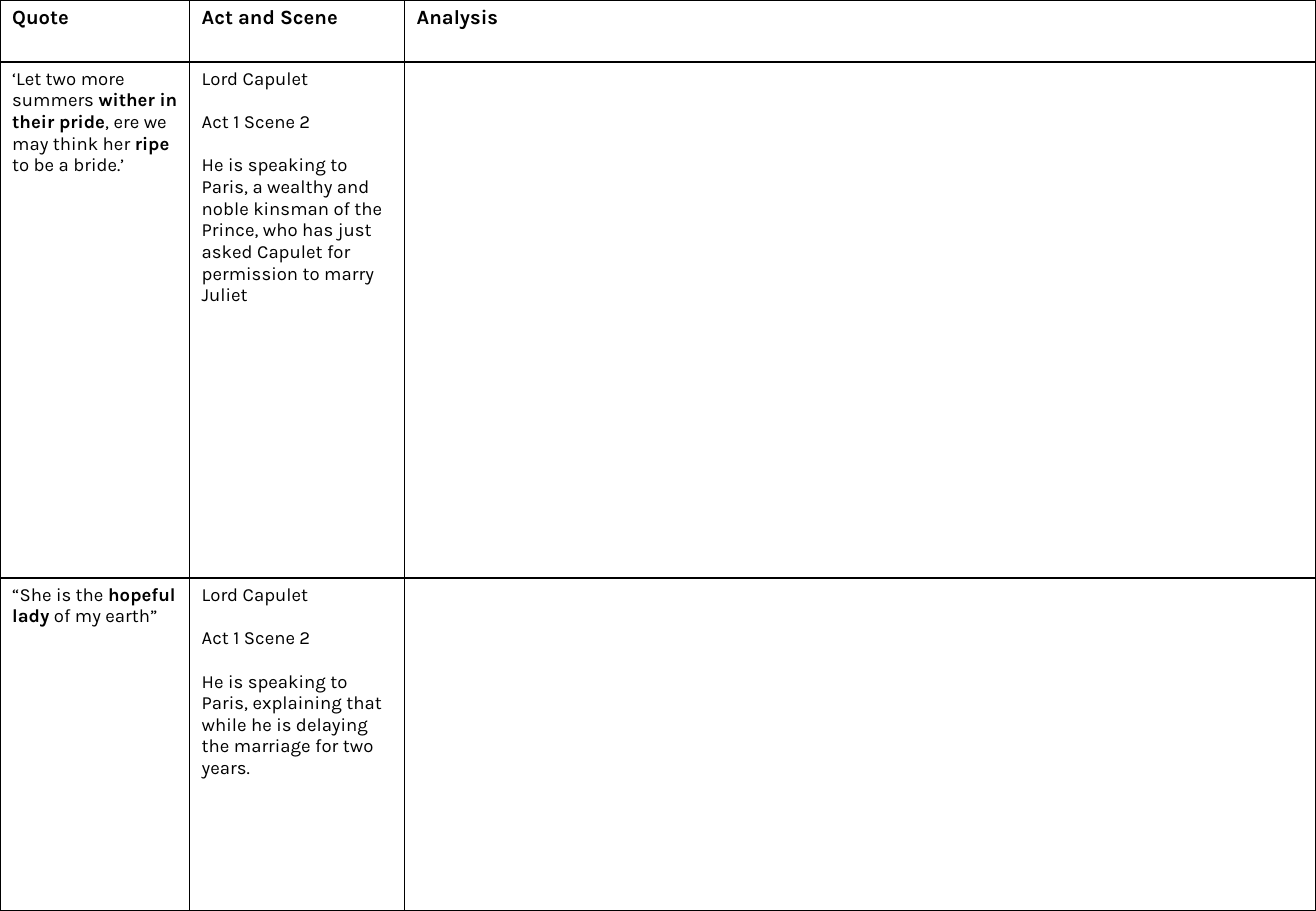
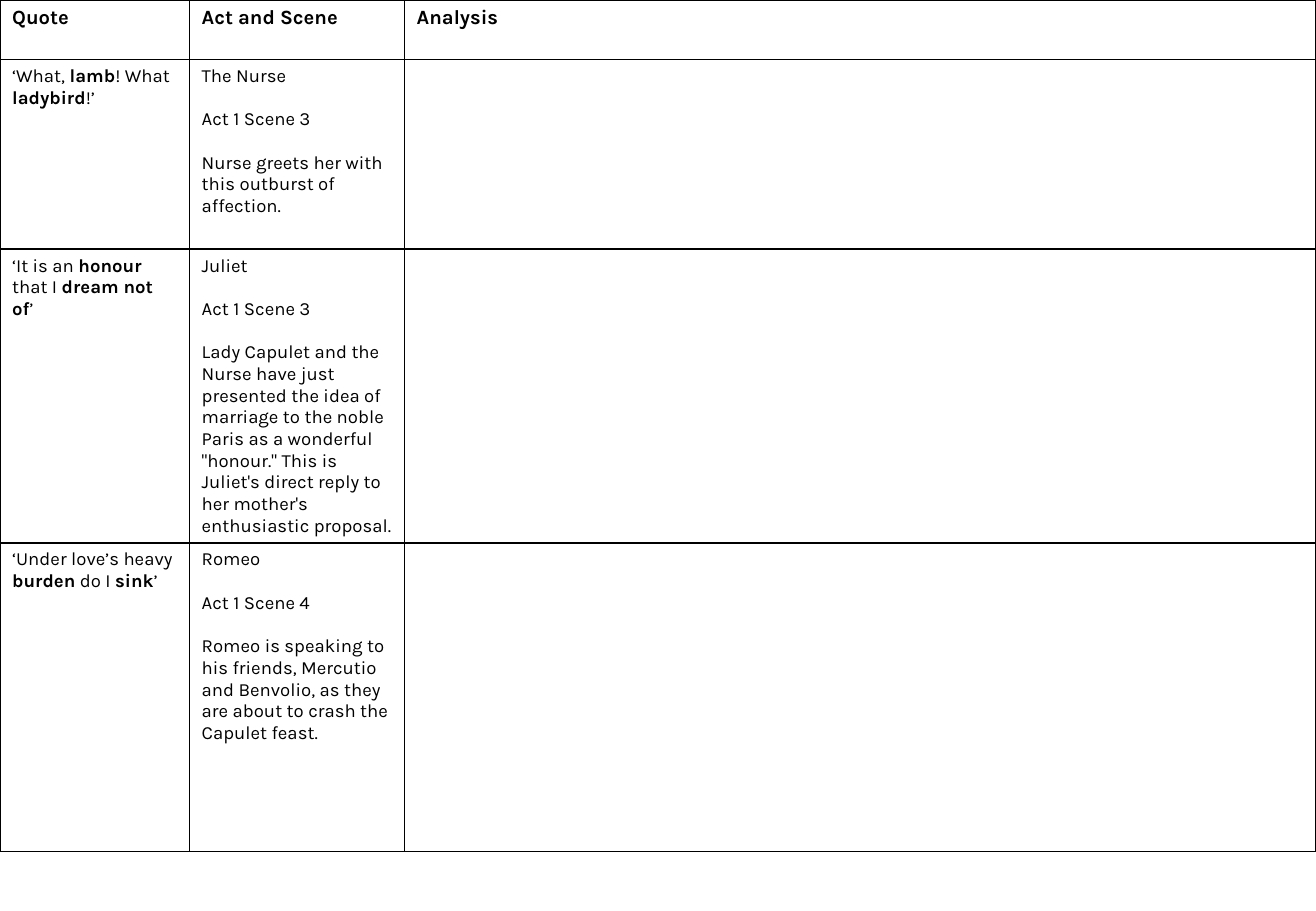
from lxml import etree
from pptx import Presentation, util as u
from pptx.dml.color import RGBColor
from pptx.oxml import ns

WIDE, HIGH = 10.83, 7.5
INK = {"text": "000000", "rule": "000000", "cell": "FFFFFF"}
HEAD = {"name": "Karla", "size": u.Pt(12), "bold": True}
BODY = {"name": "Karla", "size": u.Pt(11), "bold": False}
GAP = u.Pt(12.86)  # one line of body text
COLS = [1.56, 1.77, WIDE - 1.56 - 1.77]
TITLES = ["Quote", "Act and Scene", "Analysis"]

# Row heights, then one entry per quote; *stars* mark bold words
PAGES = [
    ([0.51, 4.25, 2.74], [
        ("‘Let two more summers *wither in their pride*, ere we may think "
         "her *ripe* to be a bride.’",
         ["Lord Capulet", "Act 1 Scene 2",
          "He is speaking to Paris, a wealthy and noble kinsman of the "
          "Prince, who has just asked Capulet for permission to marry "
          "Juliet"]),
        ("“She is the *hopeful lady* of my earth”",
         ["Lord Capulet", "Act 1 Scene 2",
          "He is speaking to Paris, explaining that while he is delaying "
          "the marriage for two years."]),
    ]),
    ([0.49, 1.56, 2.42, 2.54], [
        ("‘What, *lamb*! What *ladybird*!’",
         ["The Nurse", "Act 1 Scene 3",
          "Nurse greets her with this outburst of affection."]),
        ("‘It is an *honour* that I *dream not of*’",
         ["Juliet", "Act 1 Scene 3",
          "Lady Capulet and the Nurse have just presented the idea of "
          "marriage to the noble Paris as a wonderful \"honour.\" This is "
          "Juliet's direct reply to her mother's enthusiastic proposal."]),
        ("‘Under love’s heavy *burden* do I *sink*’",
         ["Romeo", "Act 1 Scene 4",
          "Romeo is speaking to his friends, Mercutio and Benvolio, as "
          "they are about to crash the Capulet feast."]),
    ]),
]


def style(font, form):
    for key, val in form.items():
        setattr(font, key, val)
    font.color.rgb = RGBColor.from_string(INK["text"])


def frame(cell):
    """Plain fill and a thin rule on all four sides."""
    cell.fill.solid()
    cell.fill.fore_color.rgb = RGBColor.from_string(INK["cell"])
    props = cell._tc.get_or_add_tcPr()
    for i, side in enumerate("LRTB"):
        line = etree.Element(ns.qn(f"a:ln{side}"), w=str(u.Pt(1)))
        fill = etree.SubElement(line, ns.qn("a:solidFill"))
        etree.SubElement(fill, ns.qn("a:srgbClr"), val=INK["rule"])
        props.insert(i, line)


def write(cell, paras, form):
    """One paragraph per string, a line apart."""
    for i, words in enumerate(paras):
        para = cell.text_frame.paragraphs[0] if i == 0 else cell.text_frame.add_paragraph()
        if i:
            para.space_before = GAP
        for j, part in enumerate(words.split("*")):
            if part:
                run = para.add_run()
                run.text = part
                style(run.font, {**form, "bold": form["bold"] or j % 2 == 1})


def grid(slide, left, top, rows, quotes):
    """Quote table with its header row."""
    box = [u.Inches(n) for n in (left, top, sum(COLS), sum(rows))]
    table = slide.shapes.add_table(len(rows), len(COLS), *box).table
    table.horz_banding = table.first_row = False
    for col, wide in zip(table.columns, COLS):
        col.width = u.Inches(wide)
    for row, high in zip(table.rows, rows):
        row.height = u.Inches(high)
    for cell in table.iter_cells():
        frame(cell)
    for i, title in enumerate(TITLES):
        write(table.cell(0, i), [title], HEAD)
    for i, (quote, scene) in enumerate(quotes, 1):
        write(table.cell(i, 0), [quote], BODY)
        write(table.cell(i, 1), scene, BODY)


def main():
    deck = Presentation()
    deck.slide_width, deck.slide_height = u.Inches(WIDE), u.Inches(HIGH)
    for rows, quotes in PAGES:
        slide = deck.slides.add_slide(deck.slide_layouts[6])
        grid(slide, 0, 0, rows, quotes)
    deck.save("out.pptx")


if __name__ == "__main__":
    main()
